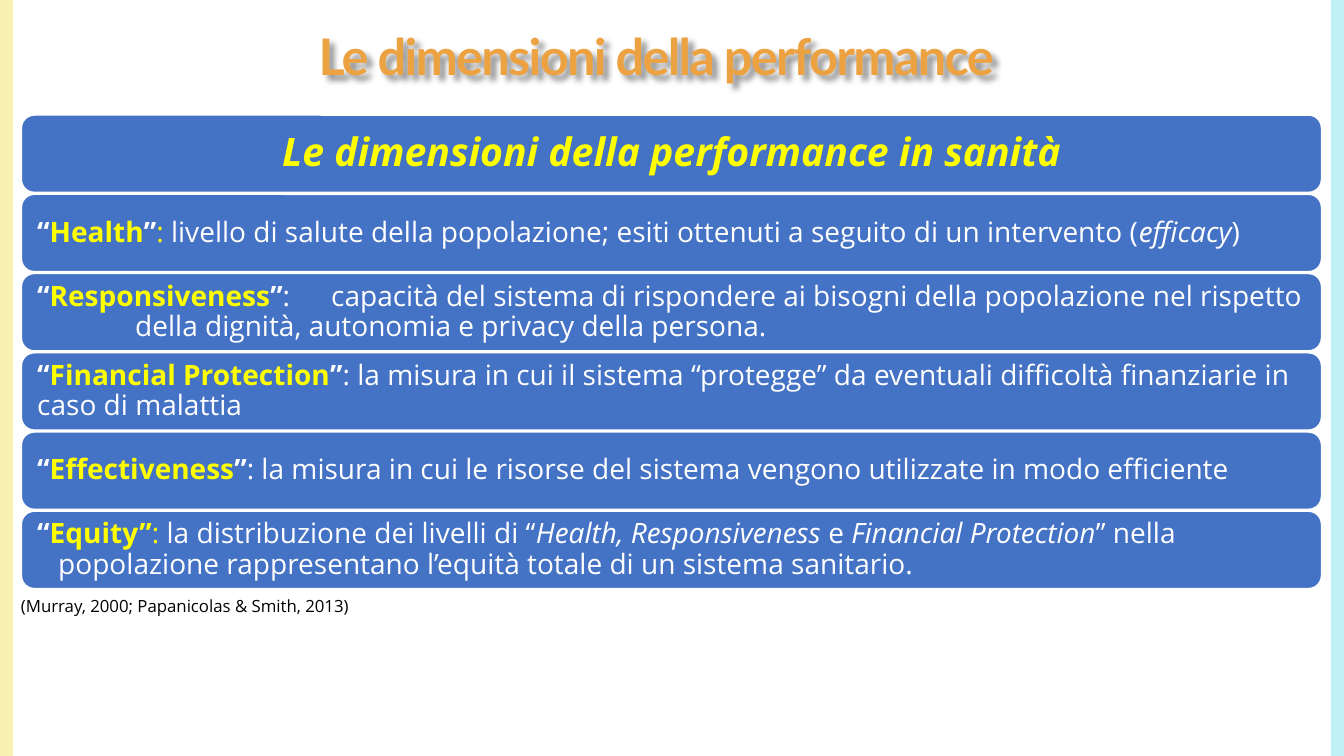
from lxml import etree
from pptx import Presentation
from pptx.dml.color import RGBColor
from pptx.enum.shapes import MSO_SHAPE
from pptx.enum.text import MSO_ANCHOR, PP_ALIGN
from pptx.oxml.ns import qn
from pptx.util import Pt

RECTANGLE, ROUNDED = MSO_SHAPE.RECTANGLE, MSO_SHAPE.ROUNDED_RECTANGLE
MIDDLE, TOP = MSO_ANCHOR.MIDDLE, MSO_ANCHOR.TOP
LEFT, CENTER = PP_ALIGN.LEFT, PP_ALIGN.CENTER

COLORS = {
    "white": "FFFFFF", "black": "000000", "yellow": "FFFF00", "orange": "EDA242",
    "blue": "4472C4", "left band": "F7F2B1", "right band": "C0F1F4",
}

# A run is (text, colour, style); style holds "b" for bold and "i" for italic.
TITLE = [("Le dimensioni della performance", "orange", "b")]
HEADING = [("Le dimensioni della performance in sanità", "yellow", "bi")]
CITATION = [("(Murray, 2000; Papanicolas & Smith, 2013)", "black", "")]

# Each dimension: name, runs after the name, hanging indent in points
DIMENSIONS = [
    ("Health", [
        ("”", "white", "b"), (": ", "yellow", ""),
        ("livello di salute della popolazione; esiti ottenuti a seguito di un intervento (", "white", ""),
        ("efficacy", "white", "i"), (")", "white", "")], 0),
    ("Responsiveness", [
        ("”", "white", "b"),
        (":\tcapacità del sistema di rispondere ai bisogni della popolazione nel rispetto "
         "della dignità, autonomia e privacy della persona.", "white", "")], 70),
    ("Financial Protection", [
        ("”", "white", "b"),
        (": la misura in cui il sistema “protegge” da eventuali difficoltà finanziarie "
         "in caso di malattia", "white", "")], 0),
    ("Effectiveness", [
        ("”", "white", "b"),
        (": la misura in cui le risorse del sistema vengono utilizzate in modo efficiente", "white", "")], 0),
    ("Equity", [
        ("”", "yellow", "b"), (": ", "yellow", ""),
        ("la distribuzione dei livelli di “", "white", ""),
        ("Health, Responsiveness", "white", "i"), (" e ", "white", ""),
        ("Financial Protection", "white", "i"),
        ("” nella popolazione rappresentano l’equità totale di un sistema sanitario.", "white", "")], 15),
]

SLIDE_W, SLIDE_H = 960, 540
BAND_W = 9.2
BAR_LEFT, BAR_TOP, BAR_W, BAR_H, BAR_PITCH = 15.3, 82.2, 928.6, 55.2, 56.6
TAB_STEP = 70


def rgb(color):
    return RGBColor.from_string(COLORS[color])


def add_box(slide, kind, left, top, width, height, fill):
    box = slide.shapes.add_shape(kind, Pt(left), Pt(top), Pt(width), Pt(height))
    box.shadow.inherit = False
    box.fill.solid()
    box.fill.fore_color.rgb = rgb(fill)
    box.line.fill.background()
    return box


def write(shape, runs, font, size, align=LEFT, anchor=MIDDLE, inset=(7.2, 3.6), spacing=0.9, hang=0):
    frame = shape.text_frame
    frame.word_wrap = True
    frame.vertical_anchor = anchor
    frame.margin_left = frame.margin_right = Pt(inset[0])
    frame.margin_top = frame.margin_bottom = Pt(inset[1])
    paragraph = frame.paragraphs[0]
    paragraph.alignment = align
    paragraph.line_spacing = spacing
    if hang:
        properties = paragraph._p.get_or_add_pPr()
        properties.set("marL", str(Pt(hang)))
        properties.set("indent", str(-Pt(hang)))
        properties.set("defTabSz", str(Pt(TAB_STEP)))
    for text, color, style in runs:
        run = paragraph.add_run()
        run.text = text
        run.font.name = font
        run.font.size = Pt(size)
        run.font.bold = "b" in style
        run.font.italic = "i" in style
        run.font.color.rgb = rgb(color)
    return paragraph


def add_text(slide, left, top, width, height, *content, **layout):
    box = slide.shapes.add_textbox(Pt(left), Pt(top), Pt(width), Pt(height))
    return box, write(box, *content, **layout)


def add_soft_shadow(shape):
    effects = etree.SubElement(shape._element.spPr, qn("a:effectLst"))
    shadow = etree.SubElement(effects, qn("a:outerShdw"), blurRad=str(Pt(4)),
                              dist=str(Pt(4.5)), dir="2700000", algn="tl", rotWithShape="0")
    black = etree.SubElement(shadow, qn("a:srgbClr"), val=COLORS["black"])
    etree.SubElement(black, qn("a:alpha"), val="43000")


def main():
    deck = Presentation()
    deck.slide_width, deck.slide_height = Pt(SLIDE_W), Pt(SLIDE_H)
    slide = deck.slides.add_slide(deck.slide_layouts[6])

    add_box(slide, RECTANGLE, 0, 0, BAND_W, SLIDE_H, "left band")
    add_box(slide, RECTANGLE, SLIDE_W - BAND_W, 0, BAND_W, SLIDE_H, "right band")

    add_text(slide, 7.9, 421.9, 480, 21.6, CITATION, "Open Sans", 12, anchor=TOP, spacing=1.0)

    bars = [(HEADING, 28, CENTER, 0)]
    for name, rest, hang in DIMENSIONS:
        bars.append(([("“", "white", "b"), (name, "yellow", "b")] + rest, 20, LEFT, hang))
    for row, (runs, size, align, hang) in enumerate(bars):
        bar = add_box(slide, ROUNDED, BAR_LEFT, BAR_TOP + row * BAR_PITCH, BAR_W, BAR_H, "blue")
        bar.line.color.rgb = rgb("white")
        bar.line.width = Pt(1)
        write(bar, runs, "Open Sans", size, align=align, inset=(8.6, 0), hang=hang)

    title, paragraph = add_text(slide, 43.9, 14.4, 849.6, 55.4, TITLE, "Lato", 36, align=CENTER)
    paragraph.runs[0].font._element.set("spc", "-120")
    add_soft_shadow(title)

    deck.save("out.pptx")


if __name__ == "__main__":
    main()
